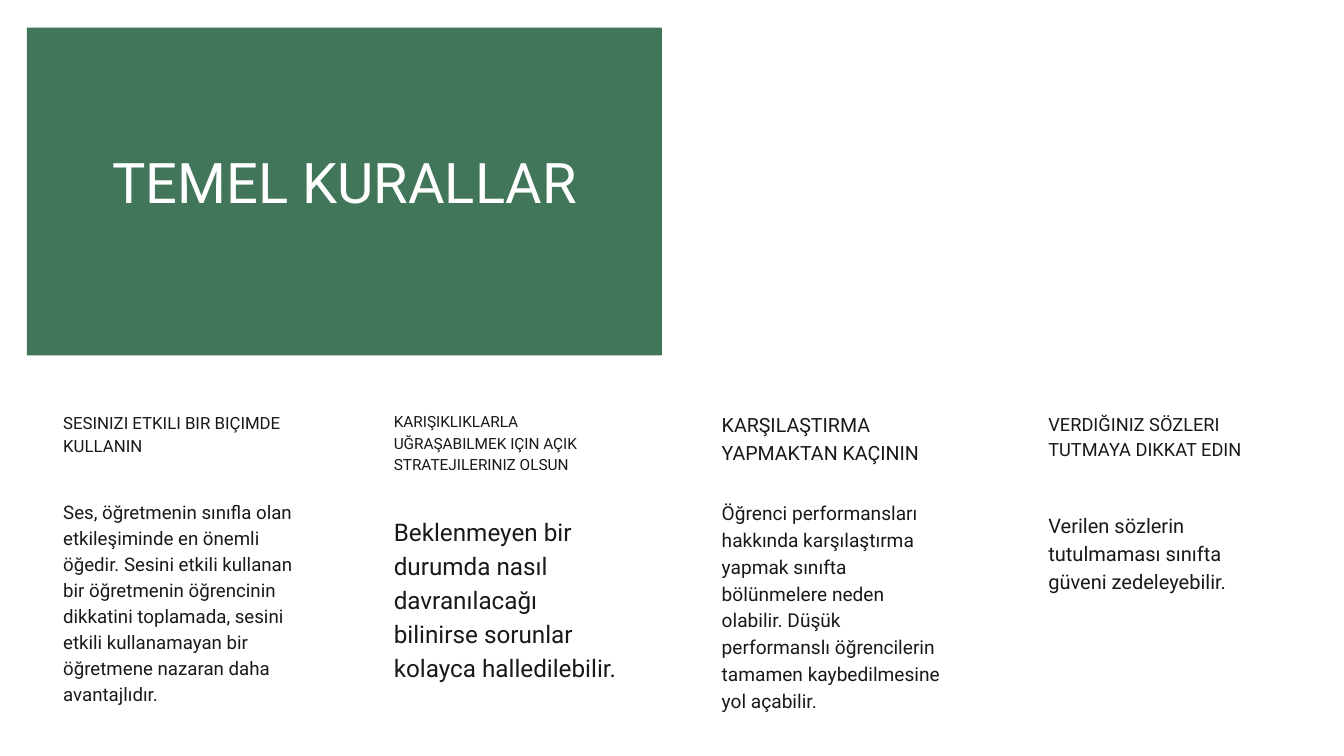
import pptx
import pptx.dml.color
import pptx.enum.shapes
import pptx.enum.text
import pptx.util

Pt = pptx.util.Pt
FONT = "Roboto"
COLORS = {"panel": "41765A", "title": "FFFFFF", "text": "191919"}
HEAD_TOP = 438.5

# Each column: left, width, heading (text, size, height), body (text, size, top, height)
COLUMNS = [
    (67.7, 252.7,
     ("SESINIZI ETKILI BIR BIÇIMDE KULLANIN", 18, 47.5),
     ("Ses, öğretmenin sınıfla olan etkileşiminde en önemli öğedir. "
      "Sesini etkili kullanan bir öğretmenin öğrencinin dikkatini toplamada, "
      "sesini etkili kullanamayan bir öğretmene nazaran daha avantajlıdır.",
      20, 532.1, 275.8)),
    (421.9, 246.2,
     ("KARIŞIKLIKLARLA UĞRAŞABILMEK IÇIN AÇIK STRATEJILERINIZ OLSUN", 16.5, 66.2),
     ("Beklenmeyen bir durumda nasıl davranılacağı bilinirse sorunlar "
      "kolayca halledilebilir.", 26, 548.6, 244.1)),
    (773.3, 244.1,
     ("KARŞILAŞTIRMA YAPMAKTAN KAÇININ", 21, 56.9),
     ("Öğrenci performansları hakkında karşılaştırma yapmak sınıfta "
      "bölünmelere neden olabilir. Düşük performanslı öğrencilerin "
      "tamamen kaybedilmesine yol açabilir.", 20.5, 533.5, 285.1)),
    (1123.2, 236.2,
     ("VERDIĞINIZ SÖZLERI TUTMAYA DIKKAT EDIN", 19.5, 52.6),
     ("Verilen sözlerin tutulmaması sınıfta güveni zedeleyebilir.",
      21.5, 545.8, 118.8)),
]


def rgb(name):
    return pptx.dml.color.RGBColor.from_string(COLORS[name])


def set_text(sp, text, size, color, spacing, align):
    """Fill a shape with one paragraph, without insets, from the top."""
    tf = sp.text_frame
    tf.text = text
    tf.word_wrap = True
    tf.auto_size = pptx.enum.text.MSO_AUTO_SIZE.NONE
    tf.vertical_anchor = pptx.enum.text.MSO_ANCHOR.TOP
    tf.margin_left = tf.margin_top = tf.margin_right = tf.margin_bottom = 0
    p = tf.paragraphs[0]
    p.alignment = align
    p.line_spacing = Pt(size * spacing)
    font = p.runs[0].font
    font.name = FONT
    font.size = Pt(size)
    font.color.rgb = rgb(color)


def add_panel(s, left, top, width, height):
    sp = s.shapes.add_shape(pptx.enum.shapes.MSO_SHAPE.RECTANGLE,
                            Pt(left), Pt(top), Pt(width), Pt(height))
    sp.shadow.inherit = False
    sp.fill.solid()
    sp.fill.fore_color.rgb = rgb("panel")
    sp.line.fill.background()
    return sp


def place_title(s, panel, text, left, top, width, height):
    sp = s.shapes.title
    sp.left, sp.top, sp.width, sp.height = Pt(left), Pt(top), Pt(width), Pt(height)
    set_text(sp, text, 60, "title", 1.2, pptx.enum.text.PP_ALIGN.CENTER)
    # Bring the title in front of its panel
    panel.element.addnext(sp.element)


def add_text(s, text, size, left, top, width, height):
    sp = s.shapes.add_textbox(Pt(left), Pt(top), Pt(width), Pt(height))
    set_text(sp, text, size, "text", 1.4, pptx.enum.text.PP_ALIGN.LEFT)


def main():
    prs = pptx.Presentation()
    prs.slide_width, prs.slide_height = Pt(1440), Pt(810)
    s = prs.slides.add_slide(prs.slide_layouts[5])

    # Title on the green panel
    panel = add_panel(s, 28.8, 29.5, 680.4, 351.4)
    place_title(s, panel, "TEMEL KURALLAR", 90.7, 157.7, 557.3, 72)

    # Four rules, each a heading above its explanation
    for left, width, heading, body in COLUMNS:
        text, size, height = heading
        add_text(s, text, size, left, HEAD_TOP, width, height)
        text, size, top, height = body
        add_text(s, text, size, left, top, width, height)

    prs.save("out.pptx")


if __name__ == "__main__":
    main()
